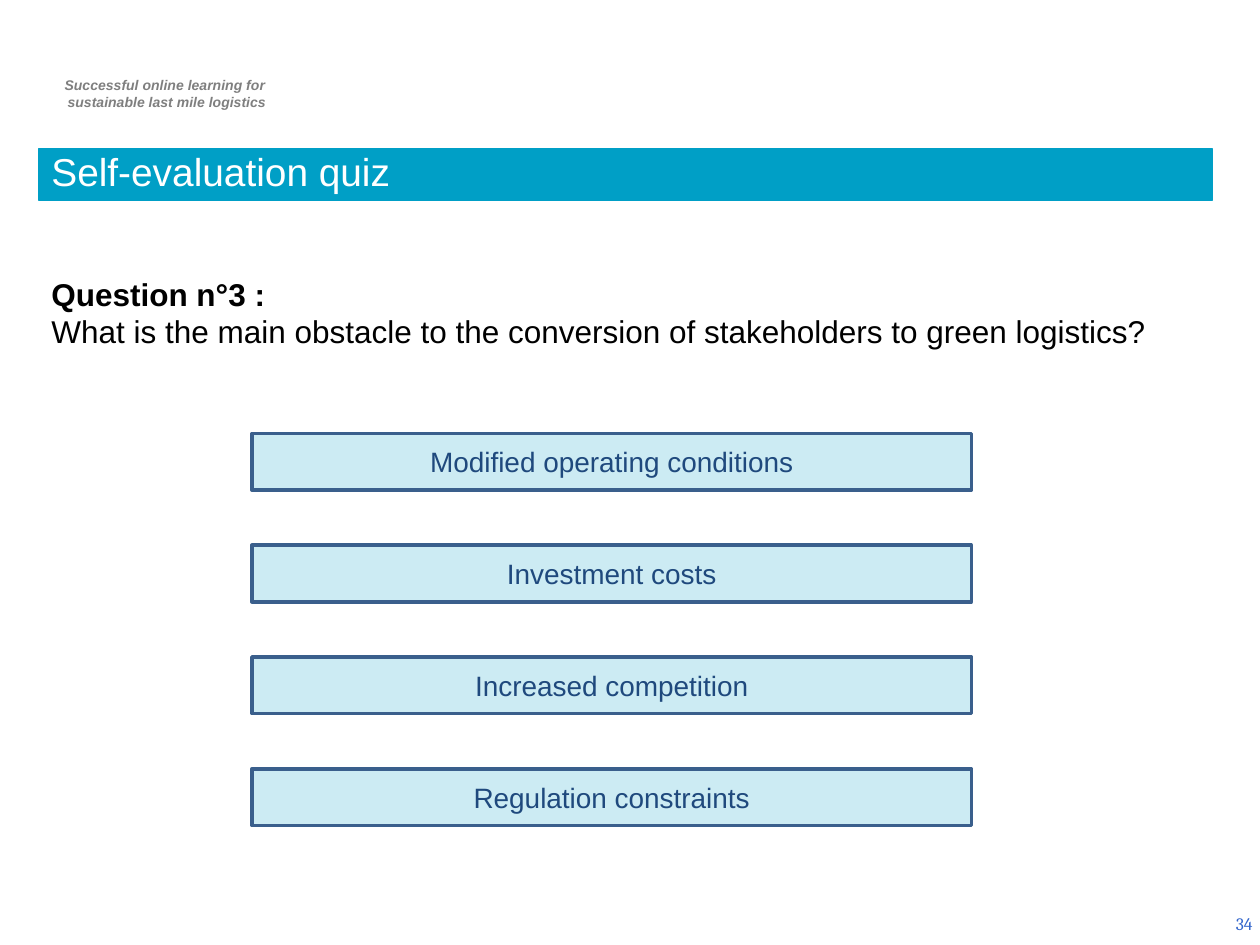
from lxml import etree
from pptx import Presentation
from pptx.dml.color import RGBColor
from pptx.enum.shapes import MSO_SHAPE
from pptx.enum.text import MSO_ANCHOR, PP_ALIGN
from pptx.oxml.ns import qn
from pptx.util import Inches, Pt

RECTANGLE = MSO_SHAPE.RECTANGLE
TOP, MIDDLE, BOTTOM = MSO_ANCHOR.TOP, MSO_ANCHOR.MIDDLE, MSO_ANCHOR.BOTTOM
LEFT, CENTER, RIGHT = PP_ALIGN.LEFT, PP_ALIGN.CENTER, PP_ALIGN.RIGHT

COLORS = {
    "teal": "009FC6",
    "border": "3A5F8C",
    "answer": "1F497D",
    "tagline": "7F7F7F",
    "number": "3366CC",
    "white": "FFFFFF",
    "black": "000000",
}
ANSWERS = [
    "Modified operating conditions",
    "Investment costs",
    "Increased competition",
    "Regulation constraints",
]
FIRST_ANSWER_TOP = 3.44
ANSWER_PITCH = 0.887


def rgb(name):
    return RGBColor.from_string(COLORS[name])


def write(shape, *lines, size, color, font="Arial", bold=(), italic=False,
          align=LEFT, anchor=TOP, spacing=None, indent=None):
    frame = shape.text_frame
    frame.word_wrap = True
    frame.vertical_anchor = anchor
    for index, line in enumerate(lines):
        paragraph = frame.paragraphs[0] if index == 0 else frame.add_paragraph()
        paragraph.alignment = align
        if spacing:
            paragraph.line_spacing = spacing
        if indent:
            paragraph._p.get_or_add_pPr().set("marL", str(Inches(indent)))
        run = paragraph.add_run()
        run.text = line
        run.font.name = font
        run.font.size = Pt(size)
        run.font.bold = index in bold
        run.font.italic = italic
        run.font.color.rgb = rgb(color)


def add_text(slide, left, top, width, height, *lines, **text_format):
    box = slide.shapes.add_textbox(
        Inches(left), Inches(top), Inches(width), Inches(height))
    write(box, *lines, **text_format)


def add_bar(slide, left, top, width, height, line, line_width, opacity=None):
    bar = slide.shapes.add_shape(
        RECTANGLE, Inches(left), Inches(top), Inches(width), Inches(height))
    bar.shadow.inherit = False
    bar.fill.solid()
    bar.fill.fore_color.rgb = rgb("teal")
    bar.line.color.rgb = rgb(line)
    bar.line.width = Pt(line_width)
    if opacity is not None:
        fill_color = bar._element.spPr.find(qn("a:solidFill"))[0]
        alpha = etree.SubElement(fill_color, qn("a:alpha"))
        alpha.set("val", str(opacity * 1000))
    return bar


def main():
    prs = Presentation()
    prs.slide_width, prs.slide_height = Inches(10), Inches(7.5)
    slide = prs.slides.add_slide(prs.slide_layouts[6])

    add_text(slide, 0.29, 0.56, 2.03, 0.37,
             "Successful online learning for ", "sustainable last mile logistics",
             size=8, color="tagline", bold=(0, 1), italic=True,
             align=CENTER, indent=0.04)
    add_text(slide, 7.71, 7.13, 2.33, 0.4, "34", size=10, color="number",
             font="Cambria", align=RIGHT, anchor=MIDDLE)

    title = add_bar(slide, 0.31, 1.18, 9.31, 0.41, "teal", 0.75)
    write(title, "Self-evaluation quiz", size=22.2, color="white",
          anchor=BOTTOM, spacing=0.8)

    add_text(slide, 0.31, 2.13, 9.31, 0.71, "Question n°3 :",
             "What is the main obstacle to the conversion of stakeholders "
             "to green logistics?",
             size=18, color="black", bold=(0,))

    for index, answer in enumerate(ANSWERS):
        option = add_bar(slide, 2, FIRST_ANSWER_TOP + index * ANSWER_PITCH,
                         5.71, 0.45, "border", 2, opacity=20)
        write(option, answer, size=16, color="answer",
              align=CENTER, anchor=MIDDLE)

    prs.save("out.pptx")


if __name__ == "__main__":
    main()
